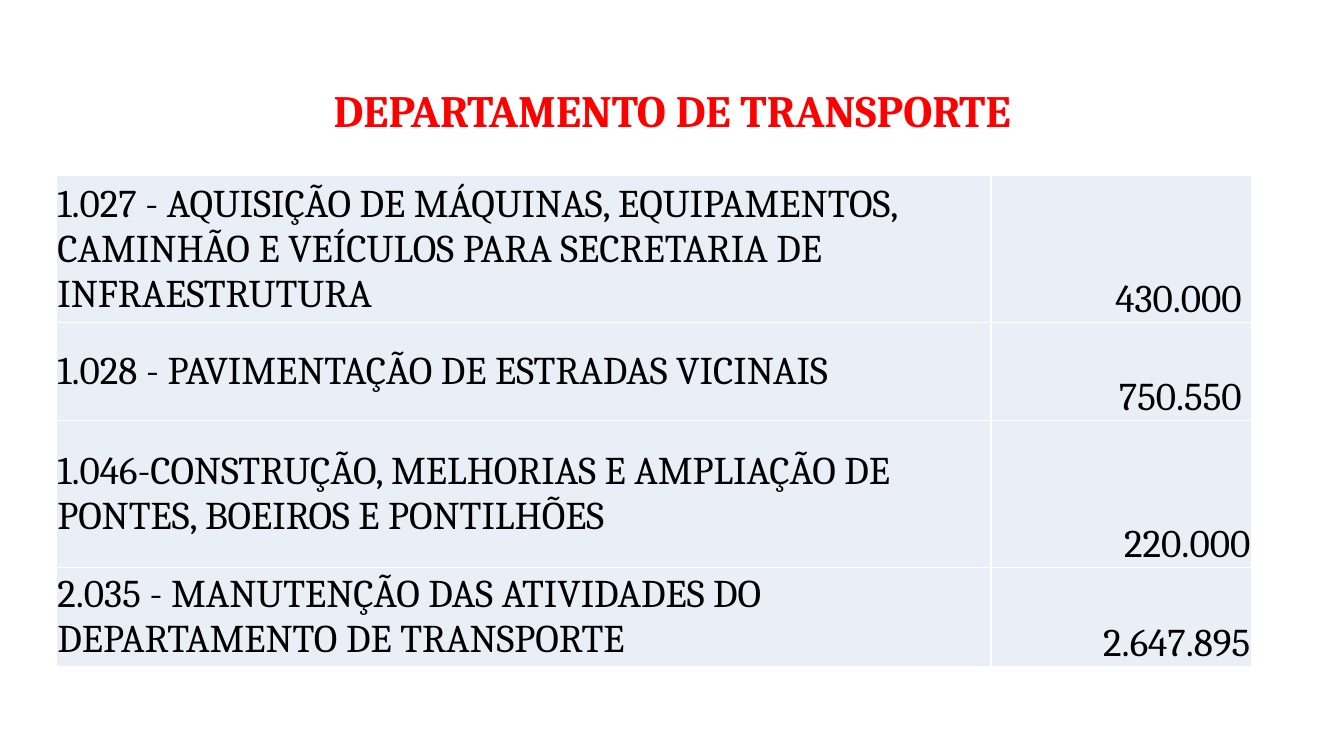
from dataclasses import dataclass

from lxml.etree import SubElement
from pptx import Presentation
from pptx.dml.color import RGBColor
from pptx.enum.text import MSO_ANCHOR, PP_ALIGN
from pptx.oxml.ns import qn
from pptx.util import Inches, Pt


@dataclass(frozen=True)
class Theme:
    font: str = "Cambria"
    red: str = "FF0000"
    ink: str = "000000"
    band: str = "EAEFF7"
    rule: str = "FFFFFF"
    head: int = 32
    body: int = 28


theme = Theme()


def style(frame, size, color, align, bold=False):
    para = frame.paragraphs[0]
    para.alignment = align
    font = para.runs[0].font
    font.name, font.size, font.bold = theme.font, Pt(size), bold
    font.color.rgb = RGBColor.from_string(color)


def frame_cell(cell):
    """Draw the four cell borders; call before the fill is set."""
    props = cell._tc.get_or_add_tcPr()
    for side in ("lnL", "lnR", "lnT", "lnB"):
        line = SubElement(props, qn(f"a:{side}"), w=str(Pt(1)))
        fill = SubElement(line, qn("a:solidFill"))
        SubElement(fill, qn("a:srgbClr"), val=theme.rule)


prs = Presentation()
prs.slide_width, prs.slide_height = Inches(13.33), Inches(7.5)
slide = prs.slides.add_slide(prs.slide_layouts[6])

# Title
title = slide.shapes.add_textbox(
    Inches(0.92), Inches(0.4), Inches(11.5), Inches(1.45)).text_frame
title.word_wrap = True
title.vertical_anchor = MSO_ANCHOR.MIDDLE
title.text = "DEPARTAMENTO DE TRANSPORTE"
title.paragraphs[0].line_spacing = 0.9
style(title, theme.head, theme.red, PP_ALIGN.CENTER, bold=True)

# Budget table: item, amount, row height
budget = [
    ("1.027 - AQUISIÇÃO DE MÁQUINAS, EQUIPAMENTOS, CAMINHÃO E VEÍCULOS "
     "PARA SECRETARIA DE INFRAESTRUTURA", "430.000 ", 1.46),
    ("1.028 - PAVIMENTAÇÃO DE ESTRADAS VICINAIS", "750.550 ", 0.97),
    ("1.046-CONSTRUÇÃO, MELHORIAS E AMPLIAÇÃO DE PONTES, BOEIROS E "
     "PONTILHÕES", "220.000", 1.46),
    ("2.035 - MANUTENÇÃO DAS ATIVIDADES DO DEPARTAMENTO DE TRANSPORTE",
     "2.647.895", 0.98),
]
columns = [
    (9.27, MSO_ANCHOR.MIDDLE, PP_ALIGN.LEFT),
    (2.58, MSO_ANCHOR.BOTTOM, PP_ALIGN.RIGHT),
]
table = slide.shapes.add_table(
    len(budget), len(columns),
    Inches(0.56), Inches(1.74), Inches(11.85), Inches(4.87)).table
table.first_row = table.horz_banding = False

for col, (width, _, _) in zip(table.columns, columns):
    col.width = Inches(width)

for r, (item, amount, height) in enumerate(budget):
    table.rows[r].height = Inches(height)
    for c, (text, (_, anchor, align)) in enumerate(zip((item, amount), columns)):
        cell = table.cell(r, c)
        frame_cell(cell)
        cell.fill.solid()
        cell.fill.fore_color.rgb = RGBColor.from_string(theme.band)
        cell.margin_left = cell.margin_right = cell.margin_top = Inches(0.01)
        cell.margin_bottom = 0
        cell.vertical_anchor = anchor
        cell.text_frame.text = text
        style(cell.text_frame, theme.body, theme.ink, align)

prs.save("out.pptx")
